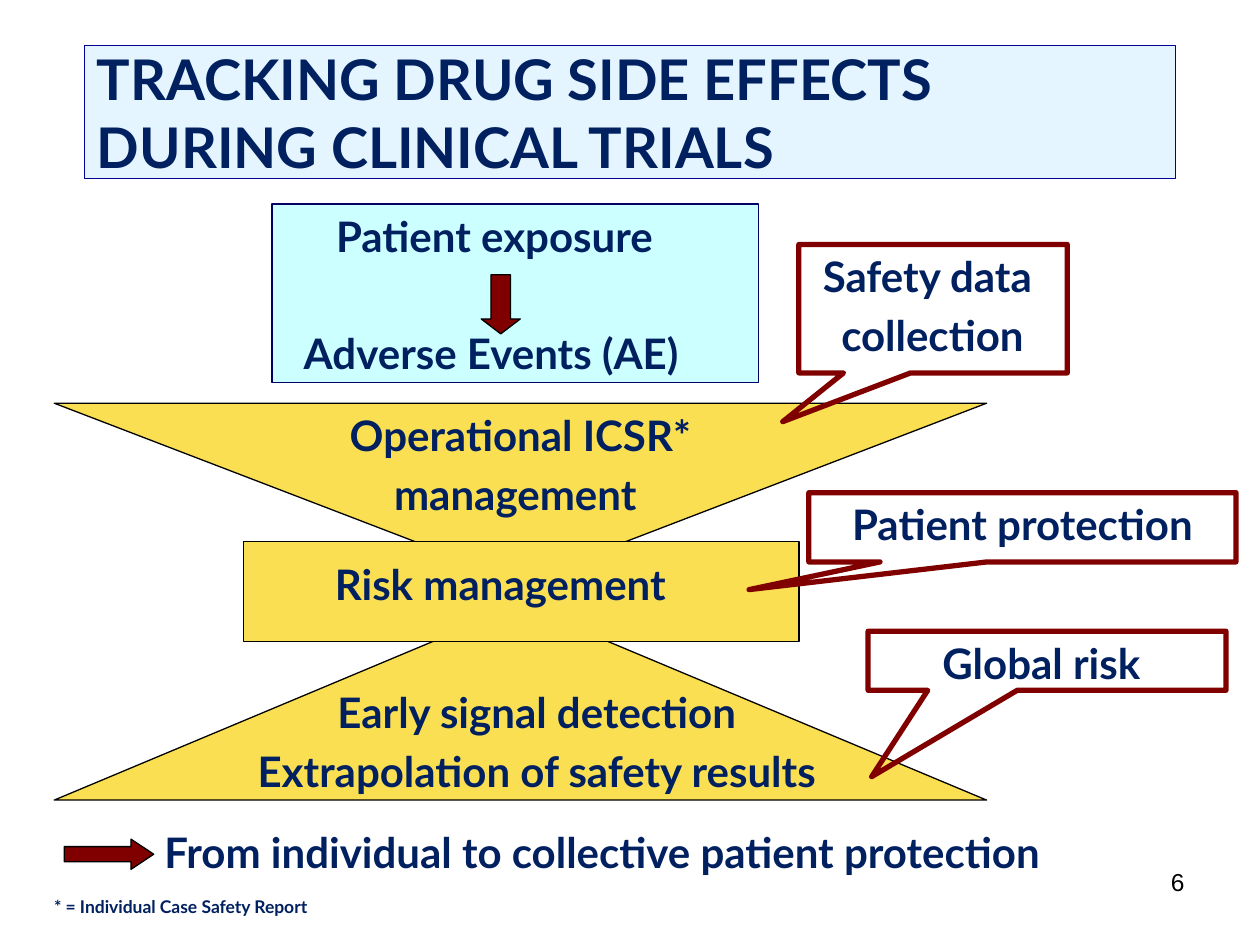
import pptx
import pptx.util
import pptx.dml.color
import pptx.enum.shapes
import pptx.enum.text
import pptx.oxml
import pptx.oxml.ns

Pt = pptx.util.Pt
RGBColor = pptx.dml.color.RGBColor
SHAPE = pptx.enum.shapes.MSO_SHAPE
ALIGN = pptx.enum.text.PP_ALIGN
ANCHOR = pptx.enum.text.MSO_ANCHOR

BLACK = RGBColor(0x00, 0x00, 0x00)
NAVY = RGBColor(0x00, 0x20, 0x60)
DARK_BLUE = RGBColor(0x00, 0x00, 0x66)
TITLE_BLUE = RGBColor(0x00, 0x00, 0x99)
PALE_BLUE = RGBColor(0xCC, 0xEC, 0xFF)
CYAN = RGBColor(0xCC, 0xFF, 0xFF)
YELLOW = RGBColor(0xFB, 0xDF, 0x53)
MAROON = RGBColor(0x80, 0x00, 0x00)


class SlideBuilder:
    font_name = "Lato"
    text_size = 24
    title_size = 32
    thin = 0.75
    thick = 3

    def __init__(self, slide):
        self.s = slide

    def paint(self, sp, fill, line, width):
        if fill is None:
            sp.fill.background()
        else:
            sp.fill.solid()
            sp.fill.fore_color.rgb = fill
        sp.line.color.rgb = line
        sp.line.width = Pt(width)

    def style(self, p, size, color=NAVY, name=font_name, bold=True):
        p.font.size = Pt(size)
        p.font.name = name
        p.font.bold = bold
        p.font.color.rgb = color

    def title(self, box, text):
        sp = self.s.shapes.title
        sp.left, sp.top, sp.width, sp.height = map(Pt, box)
        self.paint(sp, PALE_BLUE, TITLE_BLUE, self.thin)
        color = sp._element.spPr.find(".//" + pptx.oxml.ns.qn("a:srgbClr"))
        alpha = pptx.oxml.parse_xml(
            f'<a:alpha {pptx.oxml.ns.nsdecls("a")} val="50000"/>')
        color.append(alpha)
        tf = sp.text_frame
        tf.text = text
        tf.word_wrap = True
        tf.auto_size = pptx.enum.text.MSO_AUTO_SIZE.NONE
        tf.vertical_anchor = ANCHOR.MIDDLE
        p = tf.paragraphs[0]
        p.alignment = ALIGN.LEFT
        self.style(p, self.title_size)

    def shape(self, kind, box, fill, line=BLACK, width=thin, adjust=()):
        sp = self.s.shapes.add_shape(kind, *map(Pt, box))
        sp.shadow.inherit = False
        self.paint(sp, fill, line, width)
        for i, value in enumerate(adjust):
            sp.adjustments[i] = value
        return sp

    def fill_text(self, sp, lines, align=ALIGN.CENTER, size=text_size,
                  indents=(), gap=None, **font):
        tf = sp.text_frame
        tf.word_wrap = True
        tf.vertical_anchor = ANCHOR.TOP
        for i, line in enumerate(lines):
            p = tf.paragraphs[0] if i == 0 else tf.add_paragraph()
            p.text = line
            p.alignment = align
            if i:
                p.space_before = Pt(size * 0.2 if gap is None else gap)
            if indents:
                p._p.get_or_add_pPr().set("marL", str(Pt(indents[i])))
            self.style(p, size, **font)

    def text(self, box, *lines, **options):
        self.fill_text(self.s.shapes.add_textbox(*map(Pt, box)), lines, **options)

    def callout(self, box, adjust, text_box, *lines):
        self.shape(SHAPE.RECTANGULAR_CALLOUT, box, None, MAROON, self.thick, adjust)
        self.text(text_box, *lines)


def main():
    prs = pptx.Presentation()
    prs.slide_width, prs.slide_height = Pt(720), Pt(540)
    b = SlideBuilder(prs.slides.add_slide(prs.slide_layouts[5]))

    b.title((48.2, 25.9, 623.5, 76.3),
            "TRACKING DRUG SIDE EFFECTS\vDURING CLINICAL TRIALS")

    b.shape(SHAPE.FLOWCHART_MERGE, (31, 230.4, 532.8, 102.2), YELLOW)
    b.shape(SHAPE.FLOWCHART_EXTRACT, (31, 345.6, 532.8, 111.6), YELLOW)
    b.shape(SHAPE.FLOWCHART_PROCESS, (139, 309.6, 317.5, 56.9), YELLOW)

    exposure = b.shape(SHAPE.RECTANGLE, (155.5, 116.6, 277.9, 102.2), CYAN, DARK_BLUE)
    b.fill_text(exposure, ("Patient exposure", "Adverse Events (AE)"),
                align=ALIGN.LEFT, indents=(29.5, 11), gap=38.4)
    b.shape(SHAPE.DOWN_ARROW, (275, 157, 22.3, 33.8), MAROON, adjust=(0.5, 0.38))

    b.text((167, 230.4, 254.9, 73.4), " Operational ICSR*", "management")
    b.text((184.3, 315.4, 244.1, 33.8), "Risk management", align=ALIGN.LEFT)
    b.text((76.3, 388.8, 460.8, 33.8),
           "Early signal detection", "Extrapolation of safety results")

    b.callout((456.5, 139.7, 153.4, 73.4), (-0.56, 0.88),
              (445, 139.7, 175.7, 73.4), "Safety data ", "collection")
    b.callout((462.2, 281.5, 244.1, 39.6), (-0.64, 0.9),
              (456.5, 281.5, 255.6, 45.4), "Patient protection")
    b.callout((496.1, 360.7, 204.5, 33.8), (-0.49, 1.96),
              (484.6, 360.7, 221, 73.4), "Global risk")

    b.text((59.8, 468.7, 612.7, 39.6),
           "From individual to collective patient protection",
           align=ALIGN.LEFT, indents=(27,))
    b.shape(SHAPE.RIGHT_ARROW, (36.7, 479.5, 51.1, 17.3), MAROON, adjust=(0.5, 0.75))
    b.text((23.8, 508.3, 285.1, 23), "* = Individual Case Safety Report",
           align=ALIGN.LEFT, size=10)
    b.text((516.2, 491.8, 167.8, 37.4), "6", align=ALIGN.RIGHT, size=14,
           color=BLACK, name="Arial", bold=False)

    prs.save("out.pptx")


if __name__ == "__main__":
    main()
